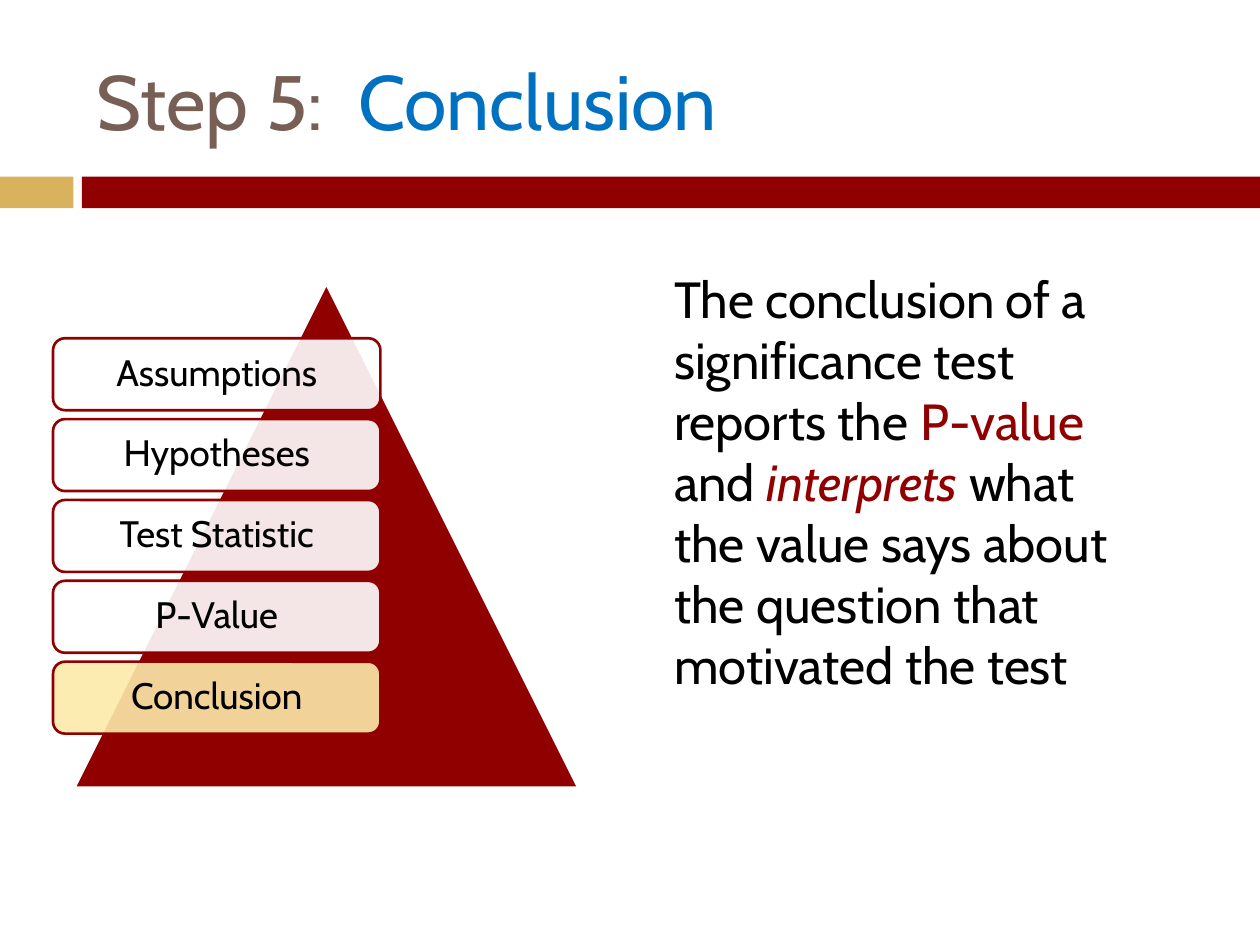
from lxml import etree
from pptx import Presentation
from pptx.dml.color import RGBColor
from pptx.enum.shapes import MSO_SHAPE
from pptx.enum.text import MSO_ANCHOR, PP_ALIGN
from pptx.oxml.ns import qn
from pptx.util import Cm, Pt

RECT, TRIANGLE, ROUNDED = MSO_SHAPE.RECTANGLE, MSO_SHAPE.ISOSCELES_TRIANGLE, MSO_SHAPE.ROUNDED_RECTANGLE
MIDDLE, LEFT, CENTER = MSO_ANCHOR.MIDDLE, PP_ALIGN.LEFT, PP_ALIGN.CENTER
FONT = "Cabin"
COLORS = {"red": "900000", "gold": "D8B25C", "cream": "FCEAAA", "white": "FFFFFF",
          "black": "000000", "brown": "775F55", "blue": "0070C0"}
STEPS = ["Assumptions", "Hypotheses", "Test Statistic", "P-Value", "Conclusion"]


def rgb(name):
    return RGBColor.from_string(COLORS[name])


def add_block(s, kind, x, y, w, h, fill, line=None):
    sp = s.shapes.add_shape(kind, Cm(x), Cm(y), Cm(w), Cm(h))
    sp.shadow.inherit = False
    sp.fill.solid()
    sp.fill.fore_color.rgb = rgb(fill)
    if line:
        sp.line.color.rgb = rgb(line)
        sp.line.width = Pt(1.5)
    else:
        sp.line.fill.background()
    return sp


def set_opacity(sp, percent):
    color = sp.fill._xPr.find(qn("a:solidFill"))[0]
    etree.SubElement(color, qn("a:alpha")).set("val", str(percent * 1000))


def add_runs(p, size, runs):
    p.font.name, p.font.size = FONT, Pt(size)
    for text, color, italic in runs:
        r = p.add_run()
        r.text = text
        r.font.color.rgb = rgb(color)
        if italic:
            r.font.italic = True


def add_header(s, x, y, w, h):
    add_block(s, RECT, x, y + 3.56, 1.48, 0.64, "gold")
    add_block(s, RECT, x + 1.65, y + 3.56, w - 1.65, 0.64, "red")
    title = s.shapes.title
    title.left, title.top, title.width, title.height = Cm(x + 1.7), Cm(y + 0.64), Cm(22.66), Cm(h - 1.46)
    tf = title.text_frame
    tf.vertical_anchor = MIDDLE
    p = tf.paragraphs[0]
    p.alignment = LEFT
    add_runs(p, 44, [("Step 5:  ", "brown", False), ("Conclusion", "blue", False)])


def add_pyramid(s, x, y, size):
    add_block(s, TRIANGLE, x, y, size, size, "red", "white")
    pitch = 1.63
    for i, step in enumerate(STEPS):
        fill = "cream" if step == STEPS[-1] else "white"
        sp = add_block(s, ROUNDED, x - 0.43, y + 1.1 + i * pitch, 6.6, 1.45, fill, "red")
        set_opacity(sp, 90)
        tf = sp.text_frame
        tf.vertical_anchor = MIDDLE
        p = tf.paragraphs[0]
        p.alignment, p.line_spacing = CENTER, 0.9
        add_runs(p, 21, [(step, "black", False)])


def add_explanation(s, x, y, w, h):
    tf = s.shapes.add_textbox(Cm(x), Cm(y), Cm(w), Cm(h)).text_frame
    tf.word_wrap = True
    add_runs(tf.paragraphs[0], 29, [
        ("The conclusion of a significance test reports the ", "black", False),
        ("P-value", "red", False),
        (" and ", "black", False),
        ("interprets", "red", True),
        (" what the value says about the question that motivated the test", "black", False),
    ])


def main():
    prs = Presentation()
    prs.slide_width, prs.slide_height = Cm(25.4), Cm(19.05)
    s = prs.slides.add_slide(prs.slide_layouts[5])
    add_header(s, 0, 0, 25.4, 4.2)
    add_explanation(s, 13.34, 5.28, 9.73, 11.4)
    add_pyramid(s, 1.5, 5.72, 10.16)
    prs.save("out.pptx")


if __name__ == "__main__":
    main()
